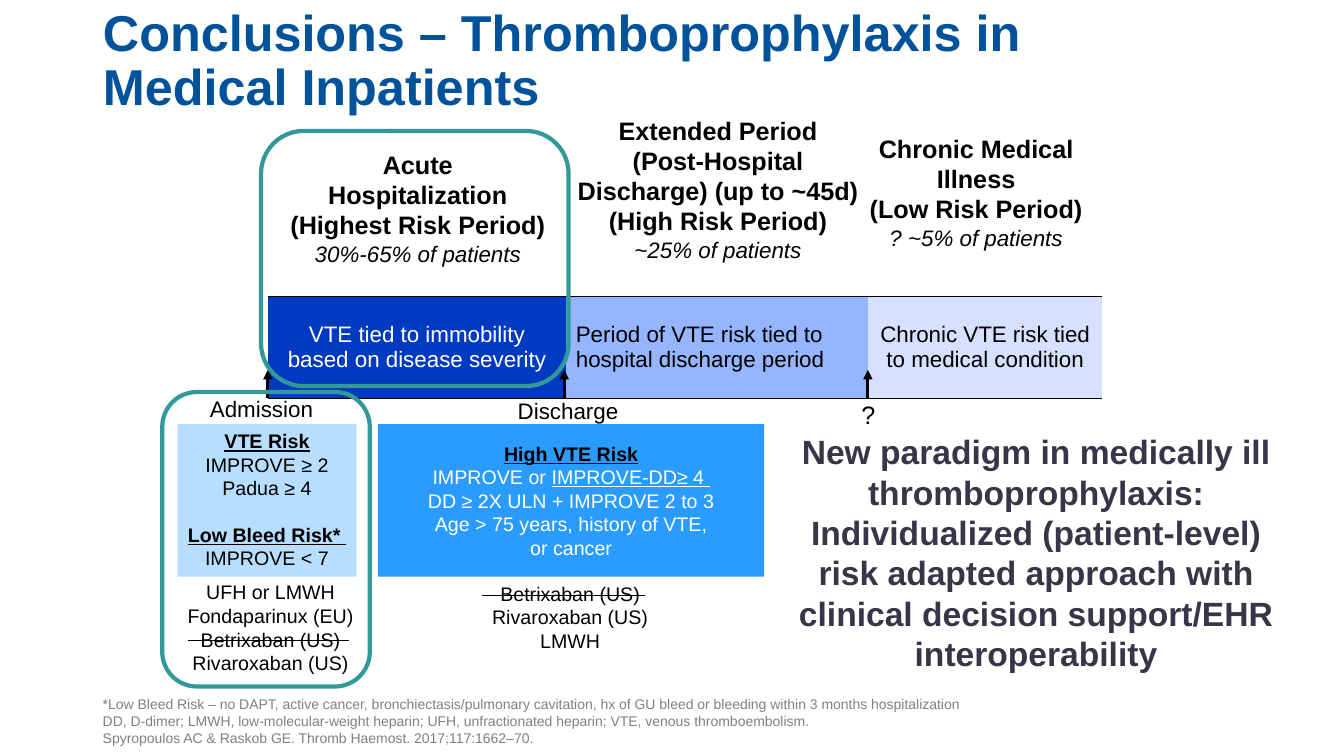
"""Build the slide on preventing clots in medical inpatients."""
from dataclasses import dataclass

from lxml import etree
from pptx import Presentation
from pptx.dml.color import RGBColor
from pptx.enum.shapes import MSO_CONNECTOR, MSO_SHAPE
from pptx.enum.text import MSO_ANCHOR, MSO_AUTO_SIZE, PP_ALIGN
from pptx.oxml.ns import qn
from pptx.util import Cm, Pt

LEFT, MID = PP_ALIGN.LEFT, PP_ALIGN.CENTER
TOP, CENTER, BOTTOM = MSO_ANCHOR.TOP, MSO_ANCHOR.MIDDLE, MSO_ANCHOR.BOTTOM
FIXED = MSO_AUTO_SIZE.NONE
RECT, ROUND = MSO_SHAPE.RECTANGLE, MSO_SHAPE.ROUNDED_RECTANGLE
STRAIGHT = MSO_CONNECTOR.STRAIGHT
BLACK, WHITE, TEAL = "000000", "FFFFFF", "339898"


@dataclass
class Line:
    text: str
    size: float = 14
    hue: str = BLACK
    bold: bool = False
    slant: bool = False
    under: bool = False
    tail: str = ""
    gap: float = 0


@dataclass
class Block:
    place: tuple
    lines: list
    fill: str = ""
    align: PP_ALIGN = MID
    anchor: MSO_ANCHOR = TOP
    wrap: bool = True


@dataclass
class Stage:
    width: float
    text: str = ""
    fill: str = ""
    hue: str = BLACK
    align: PP_ALIGN = MID


@dataclass
class Stroke:
    start: tuple
    end: tuple
    width: float
    arrow: bool = False


def paint(hue: str) -> RGBColor:
    return RGBColor.from_string(hue)


def span(place: tuple) -> list:
    return [Cm(n) for n in place]


def write(frame, lines: list, align: PP_ALIGN) -> None:
    frame.text = "\n".join(line.text for line in lines)
    for para, line in zip(frame.paragraphs, lines):
        para.alignment = align
        if line.gap:
            para.space_before = Pt(line.gap)
        if line.tail:
            para.add_run().text = line.tail
        for run in para.runs:
            font = run.font
            font.name, font.size = "Arial", Pt(line.size)
            font.bold, font.italic = line.bold, line.slant
            font.underline = line.under or (run.text == line.tail)
            font.color.rgb = paint(line.hue)


def put_block(slide, block: Block) -> None:
    if block.fill:
        shape = slide.shapes.add_shape(RECT, *span(block.place))
        shape.shadow.inherit = False
        shape.fill.solid()
        shape.fill.fore_color.rgb = paint(block.fill)
        shape.line.fill.background()
    else:
        shape = slide.shapes.add_textbox(*span(block.place))
    frame = shape.text_frame
    frame.word_wrap = block.wrap
    frame.vertical_anchor = block.anchor
    write(frame, block.lines, block.align)


def put_frame(slide, place: tuple) -> None:
    shape = slide.shapes.add_shape(ROUND, *span(place))
    shape.shadow.inherit = False
    shape.fill.background()
    shape.line.color.rgb = paint(TEAL)
    shape.line.width = Pt(3)


def put_stroke(slide, stroke: Stroke) -> None:
    link = slide.shapes.add_connector(STRAIGHT, *span(stroke.start + stroke.end))
    link.line.color.rgb = paint(BLACK)
    link.line.width = Pt(stroke.width)
    if stroke.arrow:
        etree.SubElement(link.line._get_or_add_ln(), qn("a:tailEnd"), type="triangle")
    etree.SubElement(link._element.spPr, qn("a:effectLst"))


def edge(cell, side: str, hue: str) -> None:
    rule = etree.SubElement(cell._tc.get_or_add_tcPr(), qn(f"a:ln{side}"), w=str(Pt(1.5)))
    if hue:
        fill = etree.SubElement(rule, qn("a:solidFill"))
        etree.SubElement(fill, qn("a:srgbClr"), val=hue)
    else:
        etree.SubElement(rule, qn("a:noFill"))


def put_bar(slide, place: tuple, stages: list) -> None:
    table = slide.shapes.add_table(1, len(stages), *span(place)).table
    table.first_row = table.horz_banding = False
    for col, stage in enumerate(stages):
        table.columns[col].width = Cm(stage.width)
        cell = table.cell(0, col)
        for side in "LRTB":
            edge(cell, side, BLACK if stage.fill and side in "TB" else "")
        if not stage.fill:
            cell.fill.background()
            continue
        cell.fill.solid()
        cell.fill.fore_color.rgb = paint(stage.fill)
        cell.vertical_anchor = CENTER
        write(cell.text_frame, [Line(stage.text, 16, stage.hue)], stage.align)


def phase(heads: list, share: str) -> list:
    return [Line(head, 18, bold=True) for head in heads] + [Line(share, 16, slant=True)]


STAGES = [
    Stage(0.6),
    Stage(7.5, "VTE tied to immobility\vbased on disease severity", "003AC1", WHITE),
    Stage(7.62, "Period of VTE risk tied to\vhospital discharge period", "95B5FF", align=LEFT),
    Stage(5.9, "Chronic VTE risk tied\vto medical condition", "D5E1FF"),
]
BLOCKS = [
    Block((9.53, 10.69, 9.73, 3.84), [
        Line("High VTE Risk", bold=True, under=True),
        Line("IMPROVE or ", hue=WHITE, tail="IMPROVE-DD≥ 4 "),
        Line("DD ≥ 2X ULN + IMPROVE 2 to 3", hue=WHITE),
        Line("Age > 75 years, history of VTE,\vor cancer", hue=WHITE)], "2A9CFF", anchor=CENTER),
    Block((4.47, 10.69, 4.52, 3.84), [
        Line("VTE Risk", bold=True, under=True), Line("IMPROVE ≥ 2"), Line("Padua ≥ 4"),
        Line("Low Bleed Risk* ", bold=True, under=True, gap=16.5),
        Line("IMPROVE < 7")], "B8DEFF"),
    Block((2.06, 3.63, 16.94, 3.33), phase(
        ["Acute", "Hospitalization", "(Highest Risk Period)"], "30%-65% of patients")),
    Block((14.22, 2.77, 7.75, 4.93), phase(
        ["Extended Period", "(Post-Hospital Discharge) (up to ~45d)", "(High Risk Period)"],
        "~25% of patients")),
    Block((16.13, 3.23, 16.94, 3.25), phase(
        ["Chronic Medical", "Illness", "(Low Risk Period)"], "? ~5% of patients")),
    Block((-1.65, 14.5, 16.94, 2.64), [Line(drug) for drug in (
        "UFH or LMWH", "Fondaparinux (EU)", "Betrixaban (US)", "Rivaroxaban (US)")]),
    Block((5.9, 14.53, 16.94, 2.06), [Line(drug) for drug in (
        "Betrixaban (US)", "Rivaroxaban (US)", "LMWH")]),
    Block((5.03, 9.83, 3.12, 0.94), [Line("Admission", 16)], wrap=False),
    Block((12.78, 9.88, 3.07, 0.94), [Line("Discharge", 16)], wrap=False),
    Block((21.46, 9.93, 0.86, 1.02), [Line("?", 18)], align=LEFT, wrap=False),
    Block((19.58, 10.74, 13.06, 6.4), [Line(
        "New paradigm in medically ill thromboprophylaxis: Individualized (patient-level) "
        "risk adapted approach with clinical decision support/EHR interoperability",
        24, "373648", bold=True)]),
    Block((2.34, 17.65, 29.21, 1.02), [Line(note, 10, "808080") for note in (
        "*Low Bleed Risk – no DAPT, active cancer, bronchiectasis/pulmonary cavitation, "
        "hx of GU bleed or bleeding within 3 months hospitalization",
        "DD, D-dimer; LMWH, low-molecular-weight heparin; UFH, unfractionated heparin; "
        "VTE, venous thromboembolism.\vSpyropoulos AC & Raskob GE. "
        "Thromb Haemost. 2017;117:1662–70.")], align=LEFT, anchor=CENTER),
]
STROKES = [Stroke((x, 10.03), (x, 9.32), 2.25, True) for x in (6.75, 14.22, 21.87)] + [
    Stroke((8.79, 16.15), (4.75, 16.15), 0.75),
    Stroke((16.26, 15.01), (12.14, 15.01), 0.75),
]
FRAMES = [(4.09, 9.88, 5.23, 7.42), (6.58, 3.3, 7.75, 6.43)]


def main() -> None:
    deck = Presentation()
    deck.slide_width, deck.slide_height = Cm(33.87), Cm(19.05)
    slide = deck.slides.add_slide(deck.slide_layouts[5])
    title = slide.shapes.title
    title.left, title.top, title.width, title.height = span((2.34, 0, 29.21, 3.07))
    frame = title.text_frame
    frame.auto_size, frame.vertical_anchor = FIXED, BOTTOM
    write(frame, [Line("Conclusions – Thromboprophylaxis in\vMedical Inpatients",
                       36, "00539B", bold=True)], LEFT)
    frame.paragraphs[0].line_spacing = 0.9
    put_bar(slide, (6.15, 7.47, 21.62, 2.57), STAGES)
    for block in BLOCKS:
        put_block(slide, block)
    for stroke in STROKES:
        put_stroke(slide, stroke)
    for place in FRAMES:
        put_frame(slide, place)
    deck.save("out.pptx")


if __name__ == "__main__":
    main()
